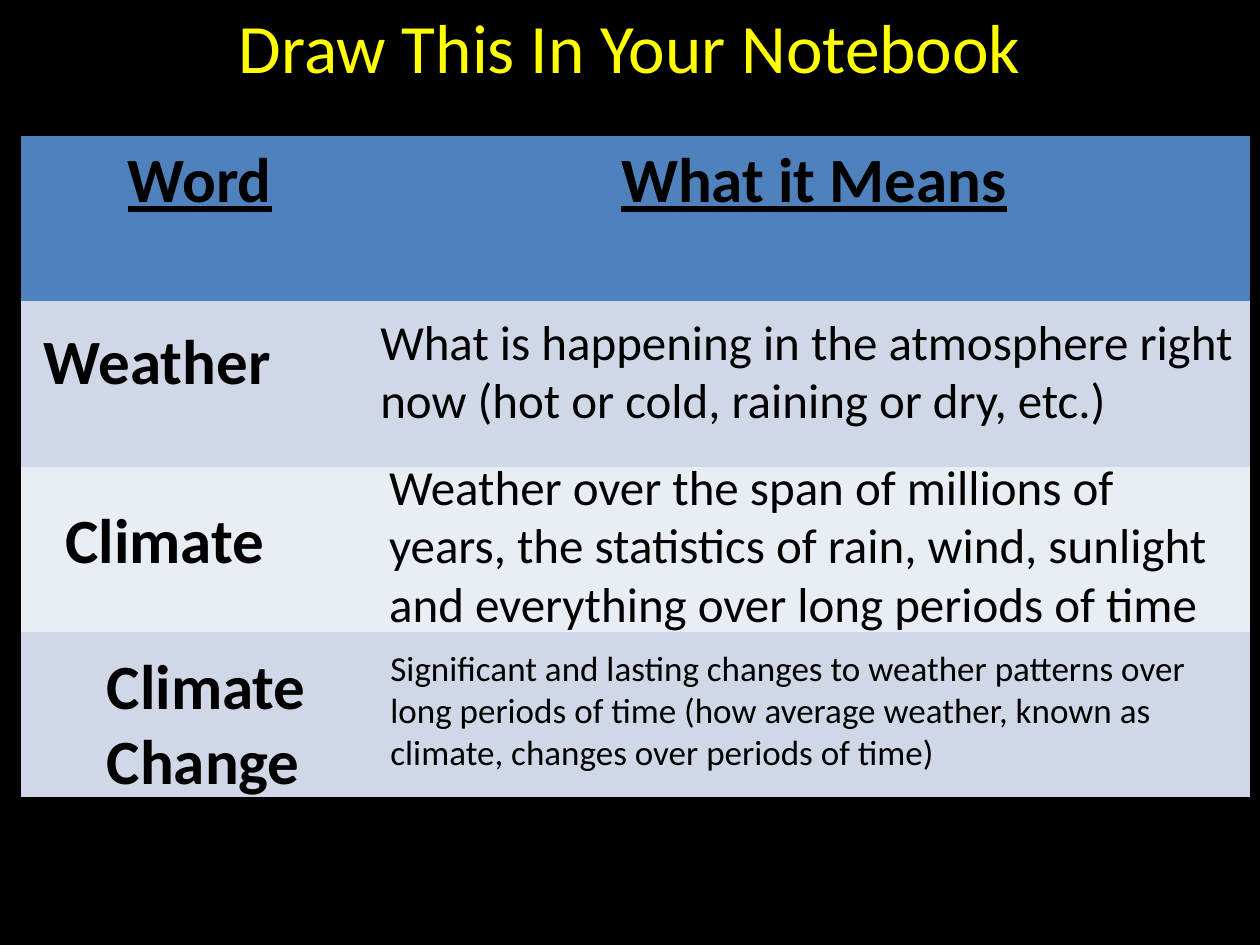
import pptx
import pptx.util
import pptx.dml.color
import pptx.enum.text

HUES = {"black": "000000", "yellow": "FFFF00", "blue": "4F81BD",
        "mid": "D0D8E8", "pale": "E9EDF4"}
ALIGN = pptx.enum.text.PP_ALIGN
ANCHOR = pptx.enum.text.MSO_ANCHOR
inch = pptx.util.Inches


def paint(fill, hue):
    fill.solid()
    fill.fore_color.rgb = pptx.dml.color.RGBColor.from_string(HUES[hue])


def write(frame, text, size=36, hue="black", bold=False, under=False,
          align=ALIGN.LEFT):
    frame.word_wrap = True
    para = frame.paragraphs[0]
    para.alignment = align
    run = para.add_run()
    run.text = text
    font = run.font
    font.name = "Calibri"
    font.size = pptx.util.Pt(size)
    font.bold = bold
    font.underline = under
    paint(font.fill, hue)


deck = pptx.Presentation()
deck.slide_width, deck.slide_height = inch(10), inch(7.5)
slide = deck.slides.add_slide(deck.slide_layouts[6])
paint(slide.background.fill, "black")

# Title
title = slide.shapes.add_textbox(0, inch(-0.03), deck.slide_width, inch(0.78))
title.text_frame.vertical_anchor = ANCHOR.MIDDLE
write(title.text_frame, "Draw This In Your Notebook", size=39.6,
      hue="yellow", align=ALIGN.CENTER)

# Table with a header and three banded rows
left, top, row, cols = 0.17, 1.08, 1.3125, (2.83, 6.92)
bands = ("blue", "mid", "pale", "mid")
grid = slide.shapes.add_table(len(bands), len(cols), inch(left), inch(top),
                              inch(sum(cols)), inch(row * len(bands)))
for style in grid.element.xpath(".//a:tableStyleId"):
    style.text = "{2D5ABB26-0587-4C30-8999-92F81FD0307C}"  # no style, no grid
table = grid.table
for col, width in zip(table.columns, cols):
    col.width = inch(width)
for line, hue in zip(table.rows, bands):
    line.height = inch(row)
    for cell in line.cells:
        paint(cell.fill, hue)
for cell, head in zip(table.rows[0].cells, ("Word", "What it Means")):
    write(cell.text_frame, head, bold=True, under=True, align=ALIGN.CENTER)

# Words and meanings laid over the table: left, top, width, height, size, text
words = (
    (0.25, 2.5, 2.92, 0.71, 36, "Weather"),
    (0.42, 3.92, 2.92, 0.71, 36, "Climate"),
    (0.75, 5.08, 2.25, 1.31, 36, "Climate Change"),
)
means = (
    (2.92, 2.42, 7, 1.04, 28, "What is happening in the atmosphere right now "
     "(hot or cold, raining or dry, etc.)"),
    (2.99, 3.57, 6.92, 1.51, 28, "Weather over the span of millions of years, "
     "the statistics of rain, wind, sunlight and everything over long periods "
     "of time"),
    (3, 5.08, 6.91, 1.11, 20, "Significant and lasting changes to weather "
     "patterns over long periods of time (how average weather, known as "
     "climate, changes over periods of time)"),
)
for group, bold in ((words, True), (means, False)):
    for *place, size, text in group:
        box = slide.shapes.add_textbox(*map(inch, place))
        box.text_frame.auto_size = pptx.enum.text.MSO_AUTO_SIZE.SHAPE_TO_FIT_TEXT
        write(box.text_frame, text, size=size, bold=bold)

deck.save("out.pptx")
